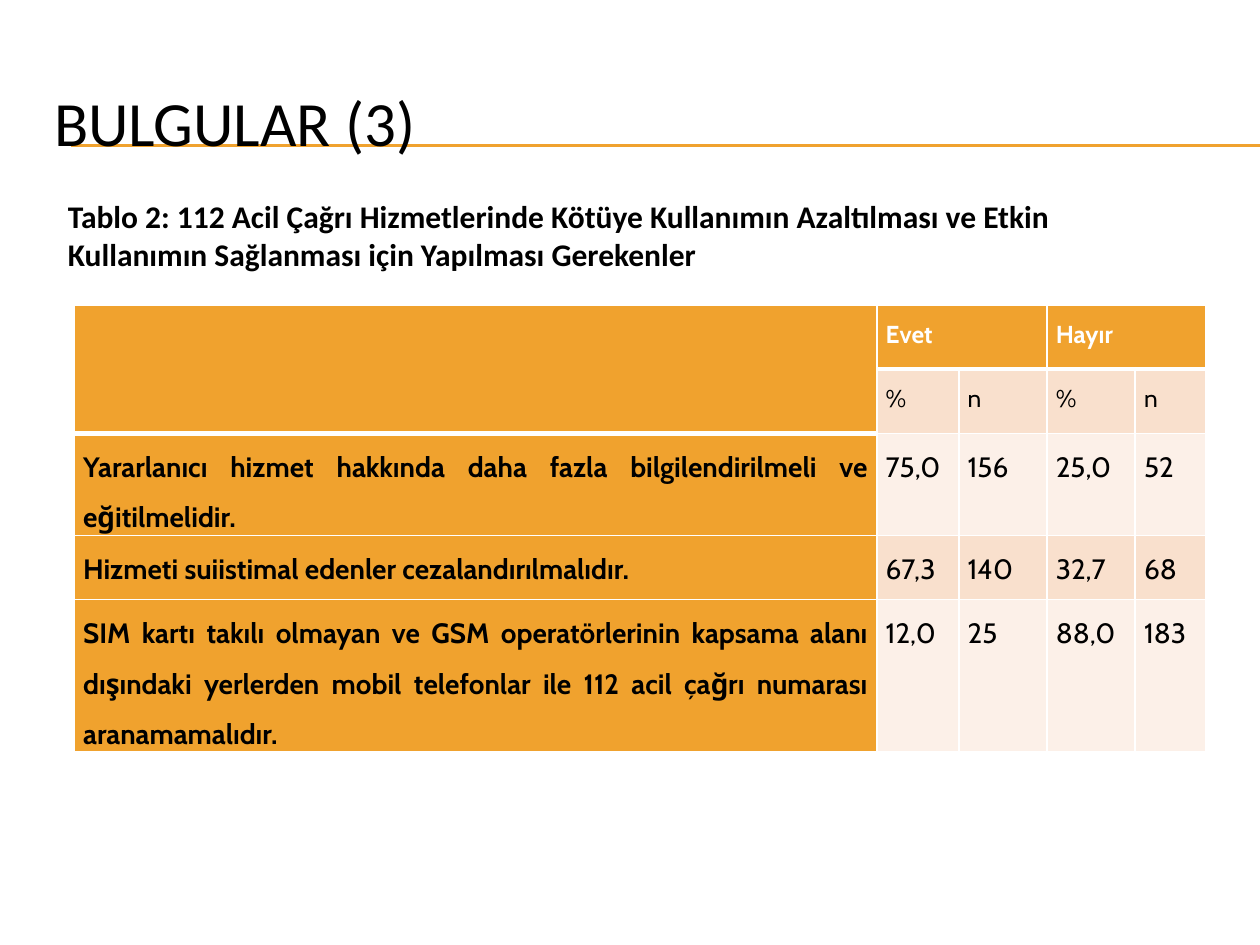
from lxml.etree import SubElement
from pptx import Presentation
from pptx.dml.color import RGBColor
from pptx.enum.shapes import MSO_CONNECTOR
from pptx.enum.text import MSO_ANCHOR, PP_ALIGN
from pptx.oxml import parse_xml
from pptx.oxml.ns import nsdecls, qn
from pptx.util import Inches, Pt

ORANGE = RGBColor(0xF0, 0xA2, 0x2E)
PEACH = RGBColor(0xF9, 0xE0, 0xCD)
CREAM = RGBColor(0xFC, 0xF0, 0xE8)
BLACK = RGBColor(0, 0, 0)
WHITE = RGBColor(0xFF, 0xFF, 0xFF)

COLUMNS = [6.37, 0.65, 0.7, 0.7, 0.56]
ROWS = [0.51, 0.51, 0.81, 0.51, 1.2]
CELLS = [
    ["", "Evet", "", "Hayır", ""],
    ["", "%", "n", "%", "n"],
    ["Yararlanıcı hizmet hakkında daha fazla bilgilendirilmeli ve eğitilmelidir.",
     "75,0", "156", "25,0", "52"],
    ["Hizmeti suiistimal edenler cezalandırılmalıdır.",
     "67,3", "140", "32,7", "68"],
    ["SIM kartı takılı olmayan ve GSM operatörlerinin kapsama alanı dışındaki "
     "yerlerden mobil telefonlar ile 112 acil çağrı numarası aranamamalıdır.",
     "12,0", "25", "88,0", "183"],
]


def write(tf, text, align, spacing, size, name, color, bold):
    p = tf.paragraphs[0]
    p.alignment = align
    p.line_spacing = spacing
    r = p.add_run()
    r.text = text
    for key, value in {"size": Pt(size), "name": name, "bold": bold}.items():
        setattr(r.font, key, value)
    r.font.color.rgb = color


def add_title(s, box):
    left, top, width, height = (Inches(v) for v in box)
    sp = s.shapes.title
    sp.left, sp.top, sp.width, sp.height = left, top, width, height
    sp.text_frame.vertical_anchor = MSO_ANCHOR.MIDDLE
    write(sp.text_frame, "BULGULAR (3)", PP_ALIGN.LEFT, 1.0, 36, "Calibri", BLACK, False)


def add_rules(s, left, right, heights):
    for index, y in enumerate(heights):
        line = s.shapes.add_connector(MSO_CONNECTOR.STRAIGHT, Inches(left), Inches(y),
                                      Inches(right), Inches(y))
        line.line.color.rgb = ORANGE
        line.line.width = Pt(0.75)
        SubElement(line.element.spPr, qn("a:effectLst"))
        s.shapes.element.insert(2 + index, line.element)


def add_caption(s, box):
    tf = s.shapes.add_textbox(*(Inches(v) for v in box)).text_frame
    tf.word_wrap = True
    tf.vertical_anchor = MSO_ANCHOR.MIDDLE
    write(tf, "Tablo 2: 112 Acil Çağrı Hizmetlerinde Kötüye Kullanımın Azaltılması "
              "ve Etkin Kullanımın Sağlanması için Yapılması Gerekenler",
          PP_ALIGN.LEFT, 1.0, 18, "Calibri", BLACK, True)


def set_borders(cell, widths):
    tcPr = cell._tc.get_or_add_tcPr()
    for index, (side, width) in enumerate(widths.items()):
        tcPr.insert(index, parse_xml(
            f'<a:ln{side} {nsdecls("a")} w="{Pt(width)}"><a:solidFill>'
            f'<a:srgbClr val="{WHITE}"/></a:solidFill></a:ln{side}>'))


def format_cell(cell, row, col, text):
    header = row == 0
    label = col == 0
    cell.fill.solid()
    cell.fill.fore_color.rgb = ORANGE if header or label else PEACH if row % 2 else CREAM
    for key, value in {"margin_left": 0.07, "margin_right": 0.07,
                       "margin_top": 0, "margin_bottom": 0}.items():
        setattr(cell, key, Inches(value))
    if text:
        write(cell.text_frame, text, PP_ALIGN.JUSTIFY, 1.5, 14 if row < 2 else 16,
              "Cabin", WHITE if header else BLACK, header or label)
    header_end = 1 if label else 0
    set_borders(cell, {"L": 1, "R": 1,
                       "T": 3 if row == header_end + 1 else 1,
                       "B": 3 if row <= header_end else 1})


def add_findings_table(s, left, top):
    frame = s.shapes.add_table(len(ROWS), len(COLUMNS), Inches(left), Inches(top),
                               Inches(sum(COLUMNS)), Inches(sum(ROWS)))
    table = frame.table
    for column, width in zip(table.columns, COLUMNS):
        column.width = Inches(width)
    for row, height in zip(table.rows, ROWS):
        row.height = Inches(height)
    for row, texts in enumerate(CELLS):
        for col, text in enumerate(texts):
            format_cell(table.cell(row, col), row, col, text)
    for first, last in [((0, 0), (1, 0)), ((0, 1), (0, 2)), ((0, 3), (0, 4))]:
        table.cell(*first).merge(table.cell(*last))


def main():
    prs = Presentation()
    prs.slide_width, prs.slide_height = Inches(10), Inches(7.5)
    s = prs.slides.add_slide(prs.slide_layouts[5])
    add_title(s, (0.33, 0.5, 9.5, 0.92))
    add_rules(s, 0.56, 10, (1.15, 1.16))
    add_findings_table(s, 0.59, 2.42)
    add_caption(s, (0.44, 1.51, 8.81, 0.71))
    prs.save("out.pptx")


if __name__ == "__main__":
    main()
